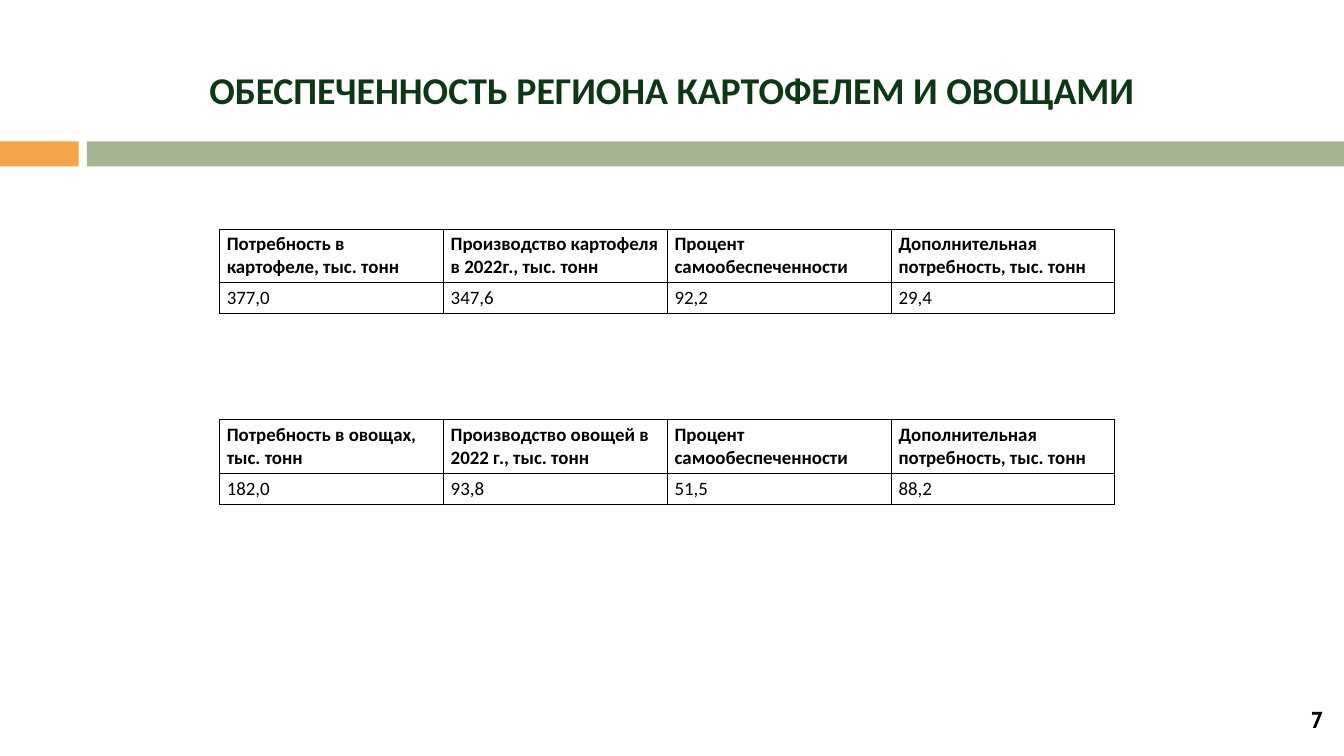
from pptx import Presentation
from pptx.dml.color import RGBColor
from pptx.enum.shapes import MSO_SHAPE
from pptx.enum.text import MSO_ANCHOR, PP_ALIGN
from pptx.oxml import parse_xml
from pptx.oxml.ns import nsdecls
from pptx.util import Pt

COLORS = {"orange": "F3A447", "sage": "A5B592", "title": "0E3815", "black": "000000"}
SLIDE_WIDTH, SLIDE_HEIGHT = 1280.16, 720
HEADER_HEIGHT, VALUE_HEIGHT = 50.4, 29.5

POTATOES = [
    ["Потребность в картофеле, тыс. тонн", "Производство картофеля в 2022г., тыс. тонн",
     "Процент самообеспеченности", "Дополнительная потребность, тыс. тонн"],
    ["377,0", "347,6", "92,2", "29,4"],
]
VEGETABLES = [
    ["Потребность в овощах, тыс. тонн", "Производство овощей в 2022 г., тыс. тонн",
     "Процент самообеспеченности", "Дополнительная потребность, тыс. тонн"],
    ["182,0", "93,8", "51,5", "88,2"],
]


def format_runs(paragraph, size, color, bold=True, name="Calibri"):
    for run in paragraph.runs:
        run.font.name = name
        run.font.size = Pt(size)
        run.font.bold = bold
        run.font.color.rgb = RGBColor.from_string(COLORS[color])


def add_bar(slide, left, top, width, height, color):
    shape = slide.shapes.add_shape(
        MSO_SHAPE.RECTANGLE, Pt(left), Pt(top), Pt(width), Pt(height))
    shape.shadow.inherit = False
    shape.fill.solid()
    shape.fill.fore_color.rgb = RGBColor.from_string(COLORS[color])
    shape.line.fill.background()


def add_divider(slide, left, top, width, height):
    """Short orange bar, a gap, then a sage bar up to the right edge."""
    accent, gap = 74.9, 7.9
    add_bar(slide, left, top, accent, height, "orange")
    start = accent + gap
    add_bar(slide, left + start, top, width - start, height, "sage")


def add_text(slide, left, top, width, height, text):
    box = slide.shapes.add_textbox(Pt(left), Pt(top), Pt(width), Pt(height))
    text_frame = box.text_frame
    text_frame.word_wrap = True
    text_frame.vertical_anchor = MSO_ANCHOR.MIDDLE
    text_frame.margin_left = text_frame.margin_right = Pt(11.5)
    text_frame.margin_top = text_frame.margin_bottom = Pt(5.8)
    text_frame.text = text
    return text_frame.paragraphs[0]


def add_title(slide, left, top, width, height):
    paragraph = add_text(slide, left, top, width, height,
                         "ОБЕСПЕЧЕННОСТЬ РЕГИОНА КАРТОФЕЛЕМ И ОВОЩАМИ")
    paragraph.line_spacing = 0.9
    format_runs(paragraph, 36, "title")


def add_page_number(slide, left, top, width, height):
    paragraph = add_text(slide, left, top, width, height, "7")
    paragraph.alignment = PP_ALIGN.RIGHT
    format_runs(paragraph, 22, "black", name="Cabin")


def add_cell_borders(cell):
    properties = cell._tc.get_or_add_tcPr()
    for index, side in enumerate(("lnL", "lnR", "lnT", "lnB")):
        properties.insert(index, parse_xml(
            f'<a:{side} {nsdecls("a")} w="{Pt(1)}"><a:solidFill>'
            f'<a:srgbClr val="{COLORS["black"]}"/></a:solidFill></a:{side}>'))


def add_supply_table(slide, left, top, width, rows):
    heights = [HEADER_HEIGHT, VALUE_HEIGHT]
    table = slide.shapes.add_table(
        len(rows), len(rows[0]), Pt(left), Pt(top), Pt(width), Pt(sum(heights))).table
    table.horz_banding = False
    table.first_row = False
    for column in table.columns:
        column.width = Pt(width / len(rows[0]))
    for row_index, values in enumerate(rows):
        table.rows[row_index].height = Pt(heights[row_index])
        for column_index, value in enumerate(values):
            cell = table.cell(row_index, column_index)
            cell.text_frame.text = value
            cell.fill.background()
            format_runs(cell.text_frame.paragraphs[0], 18, "black", bold=row_index == 0)
            add_cell_borders(cell)


def main():
    presentation = Presentation()
    presentation.slide_width = Pt(SLIDE_WIDTH)
    presentation.slide_height = Pt(SLIDE_HEIGHT)
    slide = presentation.slides.add_slide(presentation.slide_layouts[6])

    # Divider under the title
    add_divider(slide, 0, 134.6, SLIDE_WIDTH, 23.8)

    # Supply tables
    for top, rows in ((218.2, POTATOES), (399.6, VEGETABLES)):
        add_supply_table(slide, 208.8, top, 853.2, rows)

    # Title and page number
    add_title(slide, 187.9, 36, 940.3, 103.7)
    add_page_number(slide, 906.5, 666, 365, 38.2)

    presentation.save("out.pptx")


if __name__ == "__main__":
    main()
